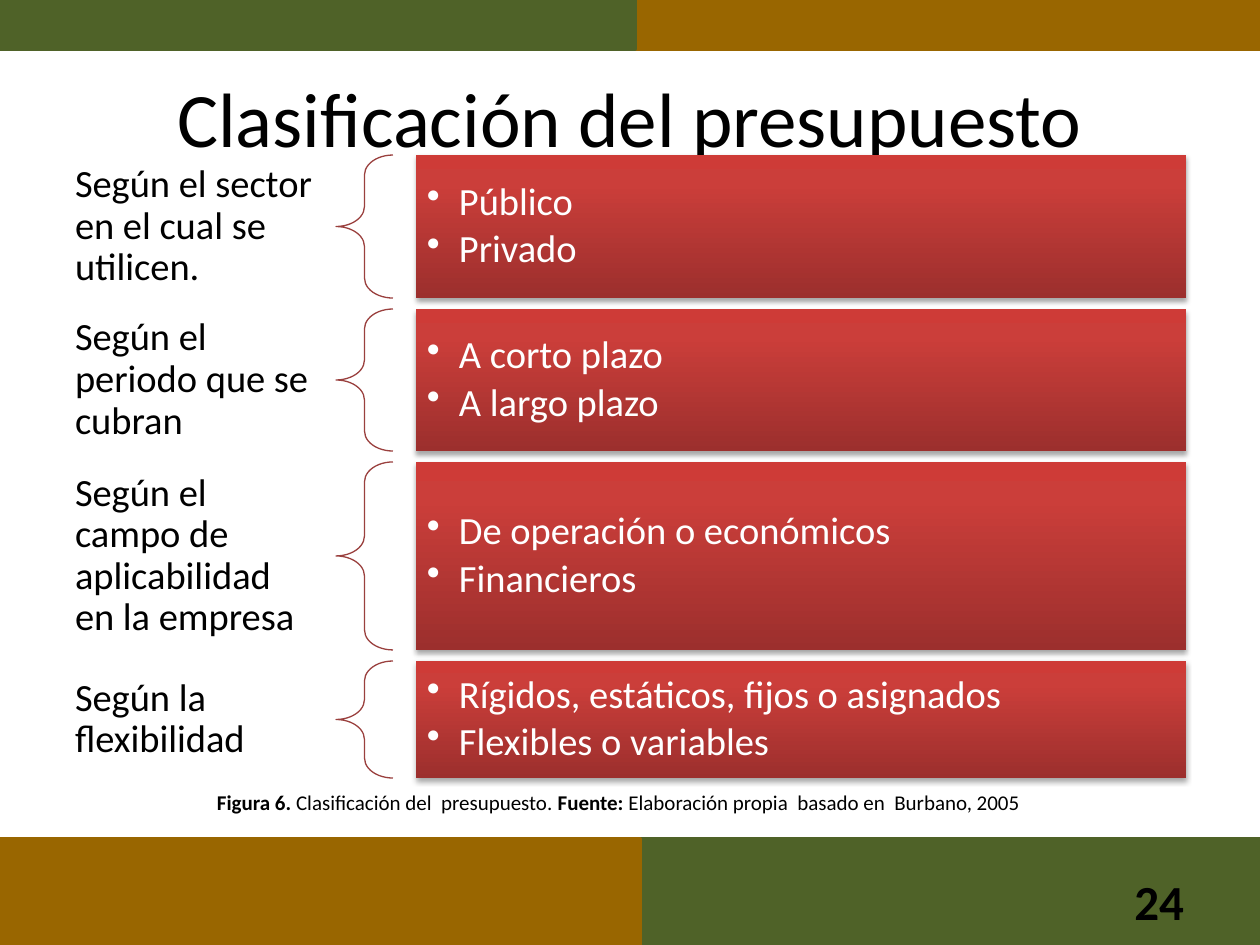
from dataclasses import dataclass

from pptx import Presentation
from pptx.dml.color import RGBColor
from pptx.enum.shapes import MSO_SHAPE
from pptx.enum.text import MSO_ANCHOR, PP_ALIGN
from pptx.oxml import parse_xml
from pptx.oxml.ns import nsdecls
from pptx.util import Emu, Pt

RECT, BRACE = MSO_SHAPE.RECTANGLE, MSO_SHAPE.LEFT_BRACE
TOP, MIDDLE = MSO_ANCHOR.TOP, MSO_ANCHOR.MIDDLE
LEFT, CENTER, RIGHT = PP_ALIGN.LEFT, PP_ALIGN.CENTER, PP_ALIGN.RIGHT


@dataclass(frozen=True)
class Theme:
    font: str = "Calibri"
    text: str = "000000"
    on_box: str = "FFFFFF"
    green: str = "4F6228"
    ochre: str = "996600"
    brace: str = "9A403E"
    box: tuple = ((0, "9C2F2D"), (80, "CB3E3A"), (100, "CE3B37"))
    title_pt: int = 44
    number_pt: int = 28
    body_pt: int = 22
    caption_pt: int = 12


def px(n):
    return Emu(round(n * 914400 / 126))


def rgb(code):
    return RGBColor.from_string(code)


class Deck:
    def __init__(self, theme):
        self.theme = theme
        self.prs = Presentation()
        self.prs.slide_width, self.prs.slide_height = px(1260), px(945)
        self.s = self.prs.slides.add_slide(self.prs.slide_layouts[6])

    def frame(self, sp, anchor, insets):
        tf = sp.text_frame
        tf.word_wrap = True
        tf.vertical_anchor = anchor
        tf.margin_left = tf.margin_right = px(insets[0])
        tf.margin_top = tf.margin_bottom = px(insets[1])
        return tf

    def run(self, p, text, size, color, bold=False):
        r = p.add_run()
        r.text = text
        r.font.name = self.theme.font
        r.font.size = Pt(size)
        r.font.bold = bold
        r.font.color.rgb = rgb(color)

    def text(self, box, runs, size, align=LEFT, anchor=MIDDLE, insets=(13, 6), spacing=1.0):
        """Add one paragraph; runs holds (text, bold) pairs."""
        sp = self.s.shapes.add_textbox(*map(px, box))
        p = self.frame(sp, anchor, insets).paragraphs[0]
        p.alignment = align
        p.line_spacing = spacing
        for words, bold in runs:
            self.run(p, words, size, self.theme.text, bold)

    def shape(self, kind, box):
        sp = self.s.shapes.add_shape(kind, *map(px, box))
        sp.shadow.inherit = False
        return sp

    def band(self, box, color):
        sp = self.shape(RECT, box)
        sp.fill.solid()
        sp.fill.fore_color.rgb = rgb(color)
        sp.line.color.rgb = rgb(color)
        sp.line.width = Pt(2)

    def brace(self, box):
        sp = self.shape(BRACE, box)
        sp.adjustments[0] = 0.35
        sp.fill.background()
        sp.line.color.rgb = rgb(self.theme.brace)
        sp.line.width = Pt(0.75)

    def bullet_box(self, box, items):
        sp = self.shape(RECT, box)
        sp.line.fill.background()
        self.shade(sp)
        tf = self.frame(sp, MIDDLE, (11, 11))
        for i, item in enumerate(items):
            p = tf.add_paragraph() if i else tf.paragraphs[0]
            p.alignment = LEFT
            p.line_spacing = 0.9
            p.space_after = Pt(3.3)
            pPr = p._p.get_or_add_pPr()
            pPr.set("marL", str(px(32)))
            pPr.set("indent", str(px(-32)))
            pPr.append(parse_xml(f'<a:buChar {nsdecls("a")} char="•"/>'))
            self.run(p, item, self.theme.body_pt, self.theme.on_box)

    def shade(self, sp):
        """Give a shape the three-stop gradient and the soft shadow below it."""
        stops = "".join(f'<a:gs pos="{pos * 1000}"><a:srgbClr val="{color}"/></a:gs>'
                        for pos, color in self.theme.box)
        spPr = sp._element.spPr
        spPr.find("{*}ln").addprevious(parse_xml(
            f'<a:gradFill {nsdecls("a")} rotWithShape="1"><a:gsLst>{stops}</a:gsLst>'
            '<a:lin ang="16200000" scaled="0"/></a:gradFill>'))
        spPr.find("{*}effectLst").append(parse_xml(
            f'<a:outerShdw {nsdecls("a")} blurRad="{Pt(3.1)}" dist="{Pt(1.8)}" dir="5400000" '
            'rotWithShape="0"><a:srgbClr val="000000"><a:alpha val="35000"/></a:srgbClr>'
            '</a:outerShdw>'))


ROWS = (
    (143, "Según el sector en el cual se utilicen.", ("Público", "Privado")),
    (142, "Según el periodo que se cubran", ("A corto plazo", "A largo plazo")),
    (188, "Según el campo de aplicabilidad en la empresa",
     ("De operación o económicos", "Financieros")),
    (117, "Según la flexibilidad",
     ("Rígidos, estáticos, fijos o asignados", "Flexibles o variables")),
)
ROW_TOP, ROW_GAP = 155, 11
CAPTION = (
    ("Figura 6. ", True),
    ("Clasificación del  presupuesto. ", False),
    ("Fuente: ", True),
    ("Elaboración propia  basado en  Burbano, 2005", False),
)


def main():
    theme = Theme()
    deck = Deck(theme)
    deck.text((63, 38, 1134, 158), [("Clasificación del presupuesto", False)],
              theme.title_pt, CENTER)

    y = ROW_TOP
    for height, label, items in ROWS:
        deck.text((54, y, 284, height), [(label, False)], theme.body_pt,
                  insets=(21, 8), spacing=0.9)
        deck.brace((336, y, 57, height))
        deck.bullet_box((416, y, 770, height), items)
        y += height + ROW_GAP

    deck.band((622, 839, 638, 106), theme.green)
    deck.band((620, 0, 640, 49), theme.ochre)
    deck.band((0, 839, 640, 106), theme.ochre)
    deck.band((0, 0, 635, 49), theme.green)

    deck.text((192, 784, 853, 38), CAPTION, theme.caption_pt, CENTER, TOP)
    deck.text((903, 876, 294, 50), [("24", True)], theme.number_pt, RIGHT)
    deck.prs.save("out.pptx")


if __name__ == "__main__":
    main()
